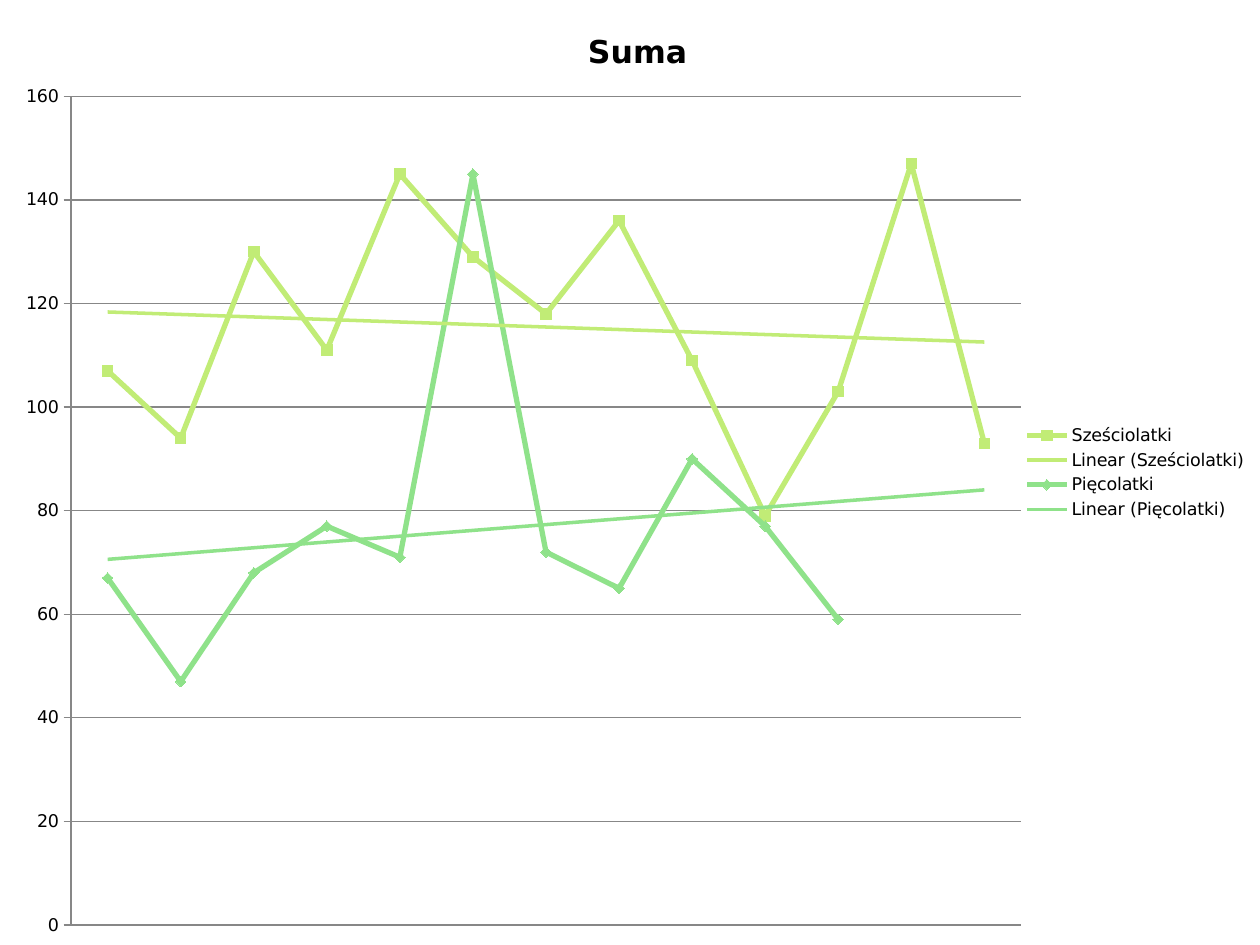
from lxml import etree
from pptx import Presentation
from pptx.chart.data import CategoryChartData
from pptx.dml.color import RGBColor
from pptx.enum.chart import XL_CHART_TYPE, XL_LEGEND_POSITION, XL_MARKER_STYLE, XL_TICK_MARK
from pptx.oxml import parse_xml
from pptx.oxml.ns import nsdecls, qn
from pptx.util import Inches, Pt

SERIES = [
    ("Sześciolatki", "C1EC76", XL_MARKER_STYLE.SQUARE,
     [107, 94, 130, 111, 145, 129, 118, 136, 109, 79, 103, 147, 93]),
    ("Pięcolatki", "8FE28A", XL_MARKER_STYLE.DIAMOND,
     [67, 47, 68, 77, 71, 145, 72, 65, 90, 77, 59, None, None]),
]
PLOT_AREA = {"x": 0.045, "y": 0.102, "w": 0.763, "h": 0.877}


def color(hex_text):
    return RGBColor.from_string(hex_text)


class ChartPage:
    """Holds the style and the current slide, and draws its elements."""

    font_name = "DejaVu Sans"
    text_color = "000000"
    grid_color = "878787"

    def __init__(self, deck):
        self.page = deck.slides.add_slide(deck.slide_layouts[6])

    def set_font(self, font, size, bold=False):
        font.name = self.font_name
        font.size = Pt(size)
        font.bold = bold
        font.color.rgb = color(self.text_color)

    def set_line(self, line, hex_text, width):
        line.color.rgb = color(hex_text)
        line.width = Pt(width)

    def line_chart(self, title, series_list, left, top, width, height):
        data = CategoryChartData()
        data.categories = [str(n + 1) for n in range(len(series_list[0][3]))]
        for name, _, _, values in series_list:
            data.add_series(name, values)
        chart = self.page.shapes.add_chart(
            XL_CHART_TYPE.LINE_MARKERS, Inches(left), Inches(top),
            Inches(width), Inches(height), data).chart
        self.set_font(chart.font, 10)
        self.title(chart, title)
        self.legend(chart)
        self.axes(chart)
        chart.plots[0].vary_by_categories = False
        for series, (_, hex_text, marker, _) in zip(chart.plots[0].series, series_list):
            self.series(series, hex_text, marker)
            self.trend_line(series, hex_text)
        return chart

    def title(self, chart, text):
        chart.has_title = True
        chart.chart_title.include_in_layout = False
        para = chart.chart_title.text_frame.paragraphs[0]
        para.text = text
        self.set_font(para.font, 18, bold=True)

    def legend(self, chart):
        chart.has_legend = True
        chart.legend.position = XL_LEGEND_POSITION.RIGHT
        chart.legend.include_in_layout = False
        self.set_font(chart.legend.font, 10)

    def axes(self, chart):
        chart.category_axis.visible = False
        axis = chart.value_axis
        axis.minimum_scale, axis.maximum_scale, axis.major_unit = 0, 160, 20
        axis.major_tick_mark = XL_TICK_MARK.OUTSIDE
        axis.has_major_gridlines = True
        self.set_line(axis.major_gridlines.format.line, self.grid_color, 0.75)
        self.set_line(axis.format.line, self.grid_color, 0.75)
        self.set_font(axis.tick_labels.font, 10)

    def series(self, series, hex_text, marker):
        series.smooth = False
        self.set_line(series.format.line, hex_text, 3)
        series.marker.style = marker
        series.marker.size = 6
        series.marker.format.fill.solid()
        series.marker.format.fill.fore_color.rgb = color(hex_text)
        series.marker.format.line.fill.background()

    def trend_line(self, series, hex_text):
        trend = parse_xml(
            f'<c:trendline {nsdecls("c", "a")}><c:spPr><a:ln w="{Pt(2)}"><a:solidFill>'
            f'<a:srgbClr val="{hex_text}"/></a:solidFill></a:ln></c:spPr>'
            '<c:trendlineType val="linear"/><c:dispRSqr val="0"/><c:dispEq val="0"/>'
            '</c:trendline>')
        series._element.find(qn("c:cat")).addprevious(trend)

    def plot_layout(self, chart, area):
        plot_area = chart._chartSpace.chart.plotArea
        for old in plot_area.findall(qn("c:layout")):
            plot_area.remove(old)
        layout = etree.Element(qn("c:layout"))
        manual = etree.SubElement(layout, qn("c:manualLayout"))
        settings = {"layoutTarget": "inner", "xMode": "edge", "yMode": "edge", **area}
        for tag, value in settings.items():
            etree.SubElement(manual, qn(f"c:{tag}"), val=str(value))
        plot_area.insert(0, layout)


def main():
    deck = Presentation()
    deck.slide_width, deck.slide_height = Inches(10), Inches(7.5)
    page = ChartPage(deck)
    chart = page.line_chart("Suma", SERIES, 0.12, 0, 9.88, 7.5)
    page.plot_layout(chart, PLOT_AREA)
    deck.save("out.pptx")


if __name__ == "__main__":
    main()
